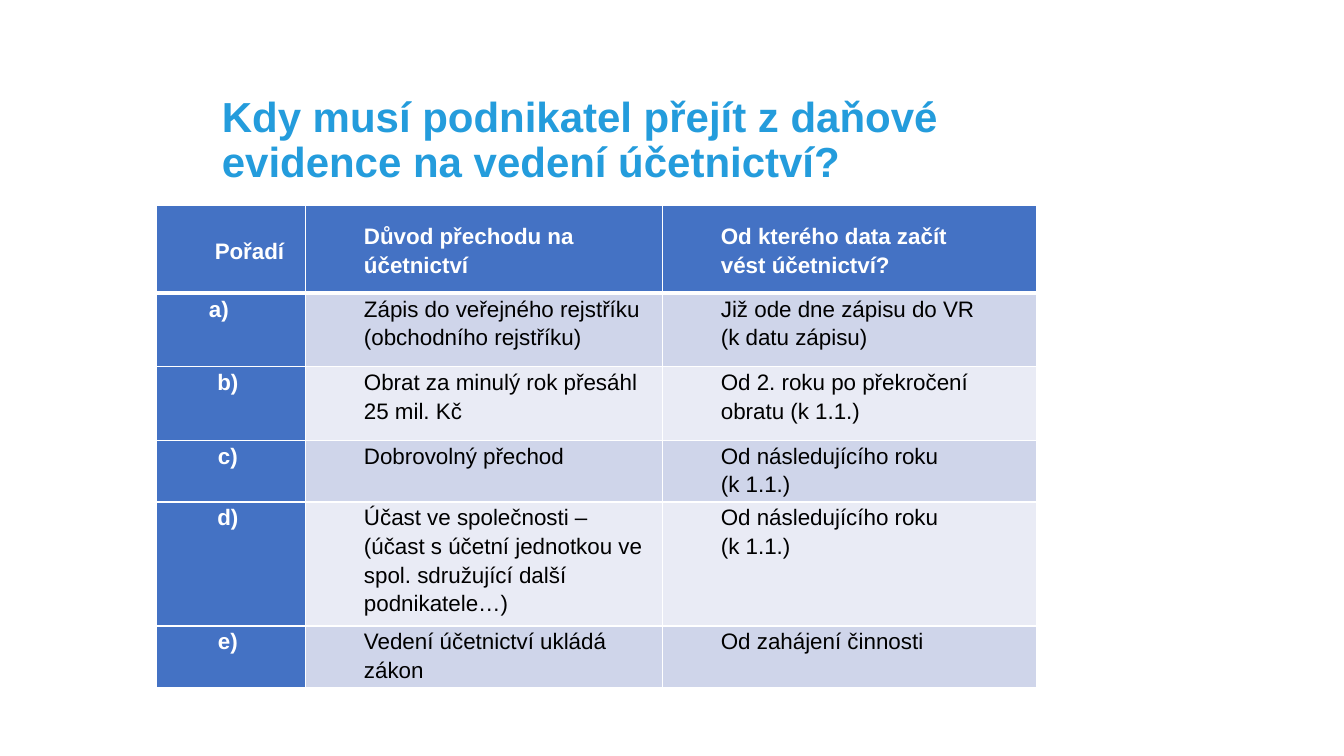
from pptx import Presentation
from pptx.dml.color import RGBColor
from pptx.enum.text import MSO_ANCHOR as Anchor, MSO_AUTO_SIZE as AutoSize, PP_ALIGN as Align
from pptx.oxml import parse_xml
from pptx.oxml.ns import nsdecls
from pptx.util import Inches, Pt

WHITE, BLACK, BLUE = "FFFFFF", "000000", "4472C4"
BANDS = ["E9EBF5", "CFD5EA"]
COLUMNS = [1.48, 3.54, 3.71]
ROWS = [0.87, 0.73, 0.73, 0.61, 1.23, 0.61]
REASONS = [
    ("Pořadí", "Důvod přechodu na účetnictví", "Od kterého data začít\nvést účetnictví?"),
    ("a)", "Zápis do veřejného rejstříku\n(obchodního rejstříku)",
     "Již ode dne zápisu do VR\n(k datu zápisu)"),
    ("b)", "Obrat za minulý rok přesáhl 25 mil. Kč",
     "Od 2. roku po překročení obratu (k 1.1.)"),
    ("c)", "Dobrovolný přechod", "Od následujícího roku\n(k 1.1.)"),
    ("d)", "Účast ve společnosti – (účast s účetní jednotkou ve spol. sdružující další podnikatele…)",
     "Od následujícího roku\n(k 1.1.)"),
    ("e)", "Vedení účetnictví ukládá zákon", "Od zahájení činnosti"),
]


def style(font, size, color, bold):
    font.name, font.size, font.bold = "Arial", Pt(size), bold
    font.color.rgb = RGBColor.from_string(color)


def add_border(cell, side, points):
    cell._tc.get_or_add_tcPr().append(parse_xml(
        f'<a:ln{side} {nsdecls("a")} w="{Pt(points)}"><a:solidFill>'
        f'<a:srgbClr val="{WHITE}"/></a:solidFill></a:ln{side}>'))


prs = Presentation()
prs.slide_width, prs.slide_height = Inches(13.33), Inches(7.5)
slide = prs.slides.add_slide(prs.slide_layouts[5])

# Title
title = slide.shapes.title
title.left, title.top, title.width, title.height = map(Inches, (2.1, 0.68, 11, 1.45))
heading = title.text_frame
heading.text = "Kdy musí podnikatel přejít z daňové\vevidence na vedení účetnictví?"
heading.word_wrap, heading.auto_size = True, AutoSize.NONE
heading.vertical_anchor = Anchor.MIDDLE
heading.paragraphs[0].alignment = Align.LEFT
heading.paragraphs[0].line_spacing = 0.9
for run in heading.paragraphs[0].runs:
    style(run.font, 30, "249CDC", True)

# Table grid
table = slide.shapes.add_table(len(ROWS), len(COLUMNS), Inches(1.55), Inches(2.04),
                               Inches(sum(COLUMNS)), Inches(sum(ROWS))).table
for column, width in zip(table.columns, COLUMNS):
    column.width = Inches(width)
for row, height in zip(table.rows, ROWS):
    row.height = Inches(height)

# Cells: blue header row and order column, banded body
for r, reason in enumerate(REASONS):
    for c, wording in enumerate(reason):
        cell = table.cell(r, c)
        is_head = r == 0 or c == 0
        is_order = r > 0 and c == 0
        for side, points in (("L", 1), ("R", 1), ("T", 3 if r == 1 else 1), ("B", 3 if r == 0 else 1)):
            add_border(cell, side, points)
        cell.fill.solid()
        cell.fill.fore_color.rgb = RGBColor.from_string(BLUE if is_head else BANDS[r % 2])
        cell.margin_left = cell.margin_right = Inches(0.08)
        cell.margin_top = cell.margin_bottom = 0
        if is_order:
            cell.margin_right = Inches(0.32 if r == 1 else 0.14)
        cell.vertical_anchor = Anchor.MIDDLE if r == 0 else Anchor.TOP
        cell.text_frame.text = wording
        for paragraph in cell.text_frame.paragraphs:
            paragraph.line_spacing = 1.15
            paragraph.alignment = Align.CENTER if is_order else Align.LEFT
            if not is_order:
                paragraph._p.get_or_add_pPr().set("marL", str(Inches(0.5)))
            style(paragraph.runs[0].font, 16, WHITE if is_head else BLACK, is_head)

prs.save("out.pptx")
